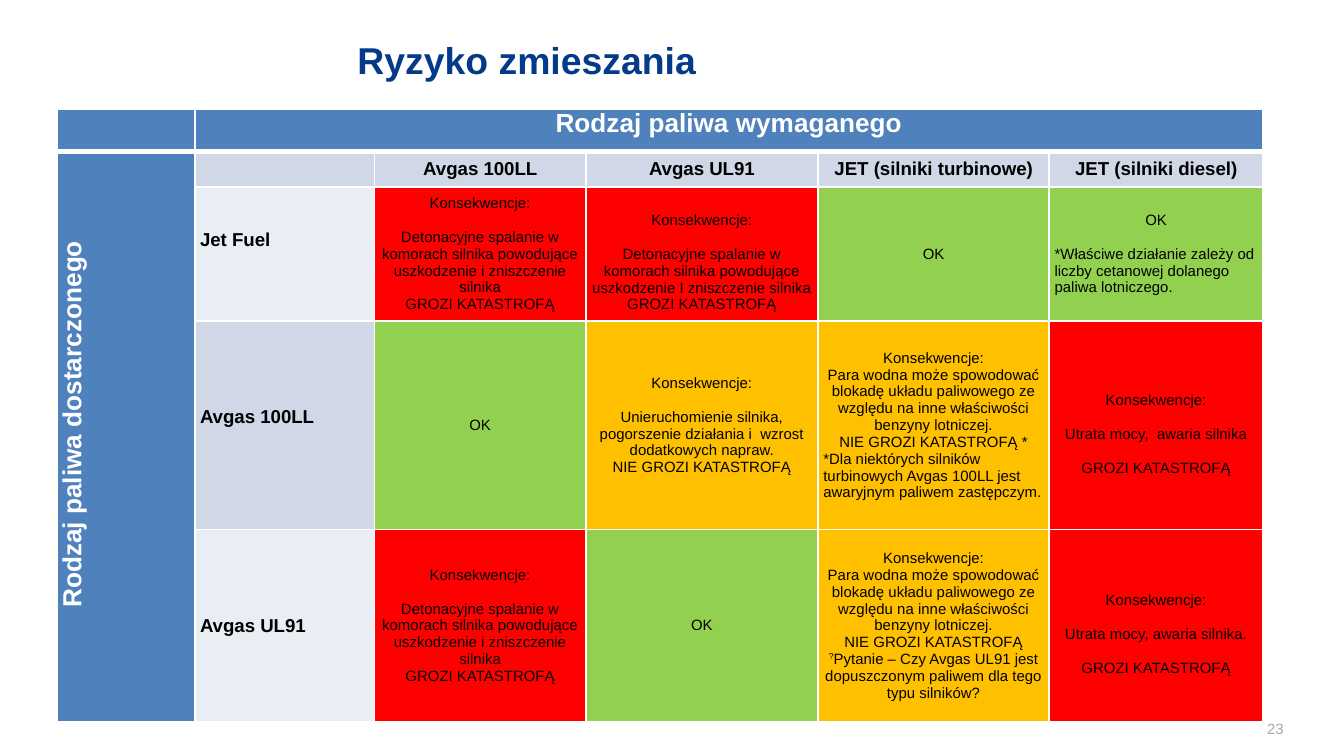
from dataclasses import dataclass

from lxml.etree import Element, SubElement
from pptx import Presentation as Deck
from pptx.dml.color import RGBColor as Color
from pptx.enum.text import MSO_ANCHOR as Anchor, PP_ALIGN as Align
from pptx.oxml.ns import qn
from pptx.util import Cm, Pt


@dataclass(frozen=True)
class Theme:
    font: str = "Arial"
    navy: str = "043A8A"
    gray: str = "A6A6A6"
    white: str = "FFFFFF"
    black: str = "000000"
    blue: str = "4F81BD"
    band: str = "D0D8E8"
    pale: str = "E9EDF4"
    red: str = "FF0000"
    green: str = "92D050"
    amber: str = "FFC000"
    title: int = 20
    head: int = 14
    label: int = 10
    small: int = 8
    lead: float = 1.15


class Maker:
    def __init__(self, slide, theme):
        self.slide = slide
        self.theme = theme

    def style(self, par, size, color, bold=False, align=Align.LEFT):
        par.alignment = align
        font = par.font
        font.name = self.theme.font
        font.size = Pt(size)
        font.bold = bold
        font.color.rgb = Color.from_string(color)

    def place(self, shape, left, top, width, height):
        shape.left, shape.top = Cm(left), Cm(top)
        shape.width, shape.height = Cm(width), Cm(height)

    def title(self, text, *box):
        shape = self.slide.shapes.title
        self.place(shape, *box)
        frame = shape.text_frame
        frame.text = text
        frame.vertical_anchor = Anchor.TOP
        self.style(frame.paragraphs[0], self.theme.title, self.theme.navy, True)

    def number(self, text, *box):
        shape = self.slide.shapes.add_textbox(*map(Cm, box))
        frame = shape.text_frame
        frame.word_wrap = True
        frame.vertical_anchor = Anchor.MIDDLE
        frame.text = text
        self.style(frame.paragraphs[0], self.theme.small, self.theme.gray,
                   align=Align.RIGHT)

    def grid(self, left, top, cols, rows):
        shape = self.slide.shapes.add_table(
            len(rows), len(cols), Cm(left), Cm(top), Cm(sum(cols)), Cm(sum(rows)))
        table = shape.table
        for col, width in zip(table.columns, cols):
            col.width = Cm(width)
        for row, height in zip(table.rows, rows):
            row.height = Cm(height)
        return table

    def cell(self, cell, fill, lines=(), size=8, color="000000", bold=False,
             align=Align.CENTER, anchor=Anchor.MIDDLE, turn=False, base=1):
        cell.fill.solid()
        cell.fill.fore_color.rgb = Color.from_string(fill)
        cell.vertical_anchor = anchor
        cell.margin_left = cell.margin_right = Cm(0.1)
        cell.margin_top = cell.margin_bottom = 0
        self.edge(cell, base)
        frame = cell.text_frame
        par, gap, first = frame.paragraphs[0], 0, True
        for line in lines:
            if not line:
                gap += size * self.theme.lead
                continue
            if not first:
                par = frame.add_paragraph()
                par.space_before = Pt(gap)
            elif turn:
                cell.margin_left = Pt(gap)
            else:
                cell.margin_top = Pt(gap)
            side = Align.LEFT if line.startswith("*") else align
            if line.startswith("?"):
                mark = par.add_run()
                mark.text, line = line[0], line[1:]
                mark.font._element.set("baseline", "30000")
            par.add_run().text = line
            self.style(par, size, color, bold, side)
            gap, first = 0, False
        if first:
            self.style(par, size, color)
            SubElement(par._p, qn("a:endParaRPr"), sz=str(size * 100))
        if turn:
            cell._tc.get_or_add_tcPr().set("vert", "vert270")

    def edge(self, cell, base):
        props = cell._tc.get_or_add_tcPr()
        for spot, side in enumerate("LRTB"):
            width = base if side == "B" else 1
            line = Element(qn("a:ln" + side), w=str(Pt(width)))
            fill = SubElement(line, qn("a:solidFill"))
            SubElement(fill, qn("a:srgbClr"), val=self.theme.white)
            props.insert(spot, line)


def main():
    look = Theme()
    deck = Deck()
    deck.slide_width, deck.slide_height = Cm(25.4), Cm(14.29)
    make = Maker(deck.slides.add_slide(deck.slide_layouts[5]), look)
    make.title("Ryzyko zmieszania", 6.5, 0.58, 24, 1.47)
    make.number("23", 23.19, 13.39, 1.32, 0.76)

    why, doom, safe = "Konsekwencje:", "GROZI KATASTROFĄ", "NIE GROZI KATASTROFĄ"
    burn = "Detonacyjne spalanie w komorach silnika powodujące uszkodzenie {} zniszczenie silnika"
    steam = ("Para wodna może spowodować blokadę układu paliwowego ze względu "
             "na inne właściwości benzyny lotniczej.")
    blast = (look.red, [why, "", burn.format("i"), doom])
    fine = (look.green, ["OK"])
    heads = ["Avgas 100LL", "Avgas UL91", "JET (silniki turbinowe)", "JET (silniki diesel)"]
    fuels = [
        ("Jet Fuel", 2, look.pale, [
            blast,
            (look.red, ["", why, "", burn.format("I"), doom]),
            fine,
            (look.green, ["OK", "", "*Właściwe działanie zależy od liczby cetanowej "
                          "dolanego paliwa lotniczego."])]),
        ("Avgas 100LL", 4, look.band, [
            fine,
            (look.amber, [why, "", "Unieruchomienie silnika, pogorszenie działania i  wzrost "
                          "dodatkowych napraw.", safe]),
            (look.amber, [why, steam, safe + " *", "*Dla niektórych silników turbinowych "
                          "Avgas 100LL jest awaryjnym paliwem zastępczym."]),
            (look.red, ["", why, "", "Utrata mocy,  awaria silnika", "", doom])]),
        ("Avgas UL91", 4, look.pale, [
            blast,
            fine,
            (look.amber, [why, steam, safe, "?Pytanie – Czy Avgas UL91 jest dopuszczonym "
                          "paliwem dla tego typu silników?"]),
            (look.red, ["", why, "", "Utrata mocy, awaria silnika.", "", doom])]),
    ]

    table = make.grid(1.09, 2.06, [2.59, 3.4, 3.99, 4.39, 4.37, 4.04],
                      [0.81, 0.66, 2.54, 3.94, 3.63])
    bar = dict(size=look.head, color=look.white, bold=True, anchor=Anchor.TOP)
    make.cell(table.cell(0, 0), look.blue, base=3)
    make.cell(table.cell(0, 1), look.blue, ["Rodzaj paliwa wymaganego"], base=3, **bar)
    for col in range(2, 6):
        make.cell(table.cell(0, col), look.blue, base=3)
    make.cell(table.cell(1, 0), look.blue, ["", "Rodzaj paliwa dostarczonego"],
              turn=True, **bar)
    make.cell(table.cell(1, 1), look.band)
    for col, head in enumerate(heads, 2):
        make.cell(table.cell(1, col), look.band, [head], look.label, bold=True)
    for row, (name, drop, fill, risks) in enumerate(fuels, 2):
        make.cell(table.cell(row, 0), look.blue)
        make.cell(table.cell(row, 1), fill, [""] * drop + [name], look.label,
                  bold=True, align=Align.LEFT, anchor=Anchor.TOP)
        for col, (shade, lines) in enumerate(risks, 2):
            make.cell(table.cell(row, col), shade, lines, look.small)
    table.cell(0, 1).merge(table.cell(0, 5))
    table.cell(1, 0).merge(table.cell(4, 0))
    deck.save("out.pptx")


if __name__ == "__main__":
    main()
